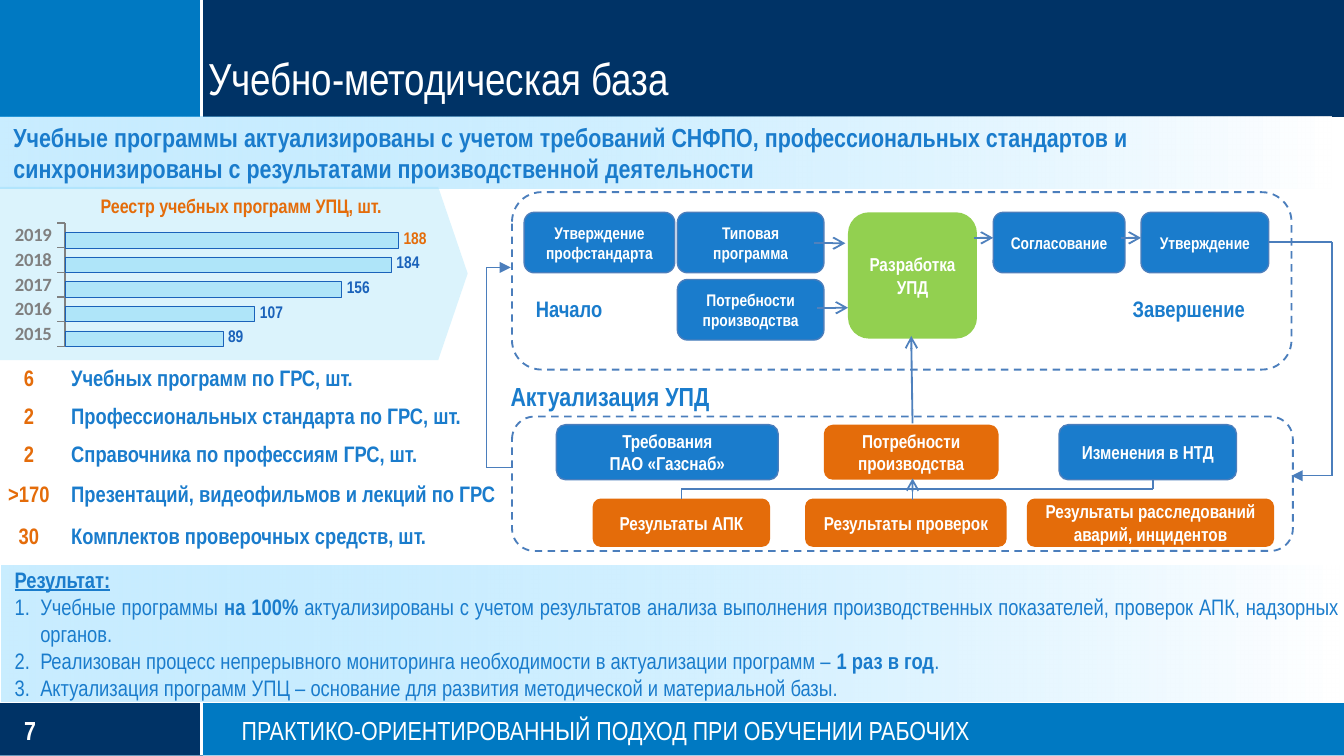
from itertools import pairwise

from lxml import etree
from pptx import Presentation
from pptx import util as u
from pptx.chart import data
from pptx.dml import color
from pptx.enum import chart as charts, dml, shapes, text
from pptx.oxml import ns

NARROW = "Arial Narrow"
WHITE, NAVY, AZURE, BLUE = "FFFFFF", "003366", "0079C2", "1A7CCC"
ORANGE, GREEN, EDGE, CYAN, INK = "E46C0A", "92D050", "4B7EBC", "00B0F0", "1A62BA"
CENTER, JUSTIFY = text.PP_ALIGN.CENTER, text.PP_ALIGN.JUSTIFY
MIDDLE = text.MSO_ANCHOR.MIDDLE
PLAIN_TABLE = "{2D5ABB26-0587-4C30-8999-92F81FD0307C}"


def rgb(value):
    """Turn a hex string into a colour."""
    return color.RGBColor.from_string(value)


def inside(box, left, top, width, height):
    """Shift a relative area to the place of its box."""
    return box[0] + left, box[1] + top, width, height


def fade(element, *percents):
    """Give the colours in an element their opacity in order."""
    for tint, percent in zip(element.iter(ns.qn("a:srgbClr")), percents):
        etree.SubElement(tint, ns.qn("a:alpha"), val=str(percent * 1000))


def style(font, size, tint, bold=None, name=NARROW):
    """Set the face, size, colour and weight of a font."""
    font.name, font.size, font.bold = name, u.Pt(size), bold
    font.color.rgb = rgb(tint)


def write(frame, lines, size, tint, bold=None, align=None):
    """Fill a text frame with one paragraph per line."""
    for index, line in enumerate(lines):
        para = frame.add_paragraph() if index else frame.paragraphs[0]
        para.text = line
        para.alignment = align
        style(para.font, size, tint, bold)


def add_label(page, box, line, size, tint, bold=None, align=None, wrap=True):
    """Add a one-paragraph text box and return its frame."""
    frame = page.shapes.add_textbox(*map(u.Inches, box)).text_frame
    frame.word_wrap = wrap
    write(frame, [line], size, tint, bold, align)
    return frame


def add_block(page, box, fill=None, line=None, kind=shapes.MSO_SHAPE.RECTANGLE, weight=0.75):
    """Add a preset shape with an optional fill and outline."""
    shape = page.shapes.add_shape(kind, *map(u.Inches, box))
    shape.shadow.inherit = False
    if fill:
        shape.fill.solid()
        shape.fill.fore_color.rgb = rgb(fill)
    else:
        shape.fill.background()
    if line:
        shape.line.color.rgb = rgb(line)
        shape.line.width = u.Pt(weight)
    else:
        shape.line.fill.background()
    return shape


def add_step(page, box, lines, size, fill=BLUE):
    """Add a rounded process step with centred text."""
    line = EDGE if fill == BLUE else None
    shape = add_block(page, box, fill, line, shapes.MSO_SHAPE.ROUNDED_RECTANGLE)
    shape.text_frame.word_wrap = True
    shape.text_frame.vertical_anchor = MIDDLE
    write(shape.text_frame, lines, size, WHITE, True, CENTER)


def add_frame(page, box):
    """Add a dashed rounded outline around a process."""
    shape = add_block(page, box, None, EDGE, shapes.MSO_SHAPE.ROUNDED_RECTANGLE, 1)
    shape.line.dash_style = dml.MSO_LINE.DASH


def add_route(page, box, points, tint=EDGE, weight=0.75, head=None):
    """Join points with straight lines, with an arrowhead on the last one."""
    for start, end in pairwise(points):
        ends = [u.Inches(box[axis] + point[axis]) for point in (start, end) for axis in (0, 1)]
        link = page.shapes.add_connector(shapes.MSO_CONNECTOR.STRAIGHT, *ends)
        link.line.color.rgb = rgb(tint)
        link.line.width = u.Pt(weight)
        if head and end == points[-1]:
            outline = link._element.spPr.find(ns.qn("a:ln"))
            etree.SubElement(outline, ns.qn("a:tailEnd"), type=head)
        etree.SubElement(link._element.spPr, ns.qn("a:effectLst"))


def add_arrow(page, box, start, end):
    """Add an open-headed arrow between two steps."""
    add_route(page, box, [start, end], "4F81BD", 1, "arrow")


def add_band(page, box, main, corner, rule):
    """Add a coloured band with a corner block and white rules."""
    width, height = box[2:]
    add_block(page, box, main)
    add_block(page, inside(box, 0, 0, 1.51, height), corner)
    add_route(page, box, [(0, rule), (width, rule)], WHITE, 1.25)
    add_route(page, box, [(1.5, 0), (1.5, height)], WHITE, 1.25)


def add_header(page, box):
    """Build the title band."""
    add_band(page, box, NAVY, AZURE, box[3] + 0.01)
    add_label(page, inside(box, 1.45, 0.33, 8.55, 0.5), "Учебно-методическая база", 24, WHITE)


def add_footer(page, box):
    """Build the footer band with the page number."""
    add_band(page, box, AZURE, NAVY, -0.01)
    frame = add_label(page, inside(box, 0.18, 0.08, 1.01, 0.24), "7", 14, WHITE, True)
    frame.margin_left = frame.margin_right = frame.margin_top = frame.margin_bottom = 0
    frame.vertical_anchor = MIDDLE
    add_label(page, inside(box, 1.7, 0.04, 8.3, 0.34),
              "ПРАКТИКО-ОРИЕНТИРОВАННЫЙ ПОДХОД ПРИ ОБУЧЕНИИ РАБОЧИХ", 14, WHITE)


def add_panel(page, box):
    """Add a fading panel and return its text frame."""
    shape = add_block(page, box)
    shape.fill.gradient()
    shape.fill.gradient_angle = 0
    for stop, tint, position in zip(shape.fill.gradient_stops, ("66CCFF", WHITE), (0, 1)):
        stop.color.rgb = rgb(tint)
        stop.position = position
    fade(shape._element.spPr, 35, 82)
    frame = shape.text_frame
    frame.word_wrap = True
    frame.vertical_anchor = MIDDLE
    frame.margin_left = frame.margin_right = frame.margin_top = frame.margin_bottom = 0
    return frame


def indent(para, left, hanging=0):
    """Set the left margin and hanging indent of a paragraph."""
    props = para._p.get_or_add_pPr()
    props.set("marL", str(u.Inches(left)))
    props.set("indent", str(-u.Inches(hanging)))
    return props


def add_summary(page, box):
    """Build the panel with the main statement."""
    frame = add_panel(page, box)
    write(frame, ["Учебные программы актуализированы с учетом требований СНФПО, профессиональных стандартов и",
                  "синхронизированы с результатами производственной деятельности"], 14, BLUE, True, JUSTIFY)
    for para in frame.paragraphs:
        indent(para, 0.1)


def add_results(page, box):
    """Build the panel with the numbered results."""
    frame = add_panel(page, box)
    write(frame, ["Результат:"], 12, BLUE, True, JUSTIFY)
    indent(frame.paragraphs[0], 0.1)
    frame.paragraphs[0].font.underline = True
    results = [
        ("Учебные программы ", "на 100%", " актуализированы с учетом результатов анализа выполнения "
         "производственных показателей, проверок АПК, надзорных органов."),
        ("Реализован процесс непрерывного мониторинга необходимости в актуализации программ – ",
         "1 раз в год", "."),
        ("Актуализация программ УПЦ – основание для развития методической и материальной базы.",)]
    for parts in results:
        para = frame.add_paragraph()
        para.alignment = JUSTIFY
        etree.SubElement(indent(para, 0.29, 0.19), ns.qn("a:buAutoNum"), type="arabicPeriod")
        style(para.font, 12, BLUE)
        for index, part in enumerate(parts):
            span = para.add_run()
            span.text = part
            if index == 1:
                span.font.bold = True


def add_register(page, box):
    """Build the bar chart of programmes by year on its arrow."""
    arrow = add_block(page, box, CYAN, kind=shapes.MSO_SHAPE.RIGHT_ARROW)
    arrow.adjustments[0], arrow.adjustments[1] = 1, 0.17
    fade(arrow._element.spPr, 14)
    source = data.CategoryChartData(number_format="#,##0")
    source.categories = ["2015", "2016", "2017", "2018", "2019"]
    source.add_series("Series 1", (89, 107, 156, 184, 188))
    source.add_series("Series 2", (None,) * 5)
    area = map(u.Inches, inside(box, 0.07, 0.06, 3.18, 1.24))
    chart = page.shapes.add_chart(charts.XL_CHART_TYPE.BAR_CLUSTERED, *area, source).chart
    chart.has_legend = chart.has_title = False
    style(chart.font, 14, INK, name="Calibri")
    years, values = chart.category_axis, chart.value_axis
    style(years.tick_labels.font, 10, "808080", True, "Calibri")
    years.format.line.color.rgb = rgb("808080")
    years.format.line.width = u.Pt(0.75)
    values.visible = values.has_major_gridlines = False
    values.minimum_scale, values.maximum_scale = 0, 200
    plot = chart.plots[0]
    plot.gap_width, plot.overlap, plot.vary_by_categories = 0, 40, False
    bars, spare = plot.series
    for series, tint in ((bars, CYAN), (spare, GREEN)):
        series.format.fill.solid()
        series.format.fill.fore_color.rgb = rgb(tint)
    fade(bars._element, 20)
    bars.format.line.color.rgb = rgb(INK)
    bars.format.line.width = u.Pt(0.25)
    labels = bars.data_labels
    labels.show_value = True
    labels.number_format, labels.number_format_is_linked = "#,##0", False
    last = bars.points[4].data_label
    for label, tint in ((labels, INK), (last, ORANGE)):
        label.position = charts.XL_LABEL_POSITION.OUTSIDE_END
        style(label.font, 9, tint, True)
    region = chart._chartSpace.find(".//" + ns.qn("c:plotArea"))
    for old in region.findall(ns.qn("c:layout")):
        region.remove(old)
    layout = etree.Element(ns.qn("c:layout"))
    manual = etree.SubElement(layout, ns.qn("c:manualLayout"))
    for tag, value in (("layoutTarget", "inner"), ("xMode", "edge"), ("yMode", "edge"),
                       ("x", "0.13"), ("y", "0.17"), ("w", "0.83"), ("h", "0.74")):
        etree.SubElement(manual, ns.qn("c:" + tag), val=value)
    region.insert(0, layout)
    add_label(page, inside(box, 0.2, 0, 3.19, 0.28), "Реестр учебных программ УПЦ, шт.",
              10.5, ORANGE, True, CENTER)


def add_totals(page, box):
    """Build the table of totals."""
    rows = [("6", "Учебных программ по ГРС, шт.", 0.29),
            ("2", "Профессиональных стандарта по ГРС, шт.", 0.28),
            ("2", "Справочника по профессиям ГРС, шт.", 0.28),
            (">170", "Презентаций, видеофильмов и лекций по ГРС", 0.33),
            ("30", "Комплектов проверочных средств, шт.", 0.29)]
    table = page.shapes.add_table(len(rows), 2, *map(u.Inches, box)).table
    table.first_row = table.horz_banding = False
    table._tbl.find(".//" + ns.qn("a:tableStyleId")).text = PLAIN_TABLE
    table.columns[0].width, table.columns[1].width = u.Inches(0.53), u.Inches(box[2] - 0.53)
    for index, (count, name, height) in enumerate(rows):
        table.rows[index].height = u.Inches(height)
        for column, (line, tint, align) in enumerate(((count, ORANGE, CENTER), (name, BLUE, None))):
            cell = table.cell(index, column)
            cell.fill.background()
            cell.vertical_anchor = MIDDLE
            if column:
                cell.margin_left = cell.margin_right = u.Inches(0.05)
            write(cell.text_frame, [line], 12, tint, True, align)
            cell.text_frame.paragraphs[0].line_spacing = 0.8


def add_development(page, box):
    """Build the process from the standard to the approval."""
    add_frame(page, box)
    for left, top, width, line in ((0.09, 0.15, 1.12, "Утверждение профстандарта"),
                                   (1.23, 0.15, 1.09, "Типовая программа"),
                                   (1.23, 0.65, 1.09, "Потребности производства"),
                                   (3.58, 0.15, 0.98, "Согласование"),
                                   (4.68, 0.15, 0.95, "Утверждение")):
        add_step(page, inside(box, left, top, width, 0.45), [line], 9)
    add_step(page, inside(box, 2.5, 0.15, 0.96, 0.94), ["Разработка УПД"], 10, GREEN)
    for start, end, top in ((2.25, 2.48, 0.38), (2.27, 2.5, 0.86), (3.44, 3.58, 0.34), (4.53, 4.68, 0.34)):
        add_arrow(page, box, (start, top), (end, top))
    for left, width, line in ((0.07, 0.71, "Начало"), (4.51, 1.05, "Завершение")):
        add_label(page, inside(box, left, 0.72, width, 0.31), line, 12, BLUE, True, CENTER, False)


def add_update(page, box):
    """Build the process that keeps the programmes up to date."""
    add_frame(page, box)
    add_label(page, inside(box, -0.12, -0.32, 1.7, 0.35), "Актуализация УПД", 14, BLUE, True, CENTER)
    for left, top, width, height, lines, fill in (
            (0.33, 0.06, 1.65, 0.41, ["Требования", "ПАО «Газснаб»"], BLUE),
            (2.32, 0.06, 1.3, 0.41, ["Потребности производства"], ORANGE),
            (4.07, 0.06, 1.32, 0.41, ["Изменения в НТД"], BLUE),
            (0.6, 0.61, 1.32, 0.36, ["Результаты АПК"], ORANGE),
            (2.18, 0.61, 1.5, 0.36, ["Результаты проверок"], ORANGE),
            (3.83, 0.61, 1.84, 0.36, ["Результаты расследований аварий, инцидентов"], ORANGE)):
        add_step(page, inside(box, left, top, width, height), lines, 10, fill)
    add_arrow(page, box, (2.98, 0.62), (2.98, 0.46))
    add_route(page, box, [(1.26, 0.61), (1.26, 0.54), (4.77, 0.54), (4.77, 0.47)])


def add_cycle(page, box):
    """Join the two processes into a cycle."""
    add_route(page, box, [(5.82, 0.37), (6.29, 0.37), (6.29, 2.11), (5.99, 2.11)], head="triangle")
    add_route(page, box, [(0.18, 2.05), (0, 2.05), (0, 0.56), (0.18, 0.56)], head="triangle")
    add_arrow(page, box, (3.17, 1.72), (3.16, 1.07))


def main():
    """Build and save the slide."""
    deck = Presentation()
    deck.slide_width, deck.slide_height = u.Inches(10), u.Inches(10 * 9 / 16)
    page = deck.slides.add_slide(deck.slide_layouts[6])
    add_header(page, (0, 0, 10, 0.87))
    add_footer(page, (0, 5.23, 10, 0.39))
    add_register(page, (0, 1.39, 3.48, 1.29))
    add_development(page, (3.81, 1.43, 5.8, 1.32))
    add_update(page, (3.81, 3.1, 5.81, 1))
    add_cycle(page, (3.62, 1.43, 6.29, 2.11))
    add_summary(page, (0, 0.87, 9.91, 0.53))
    add_results(page, (0.01, 4.21, 9.96, 1.01))
    add_totals(page, (-0.05, 2.69, 4.04, 1.46))
    deck.save("out.pptx")


if __name__ == "__main__":
    main()
